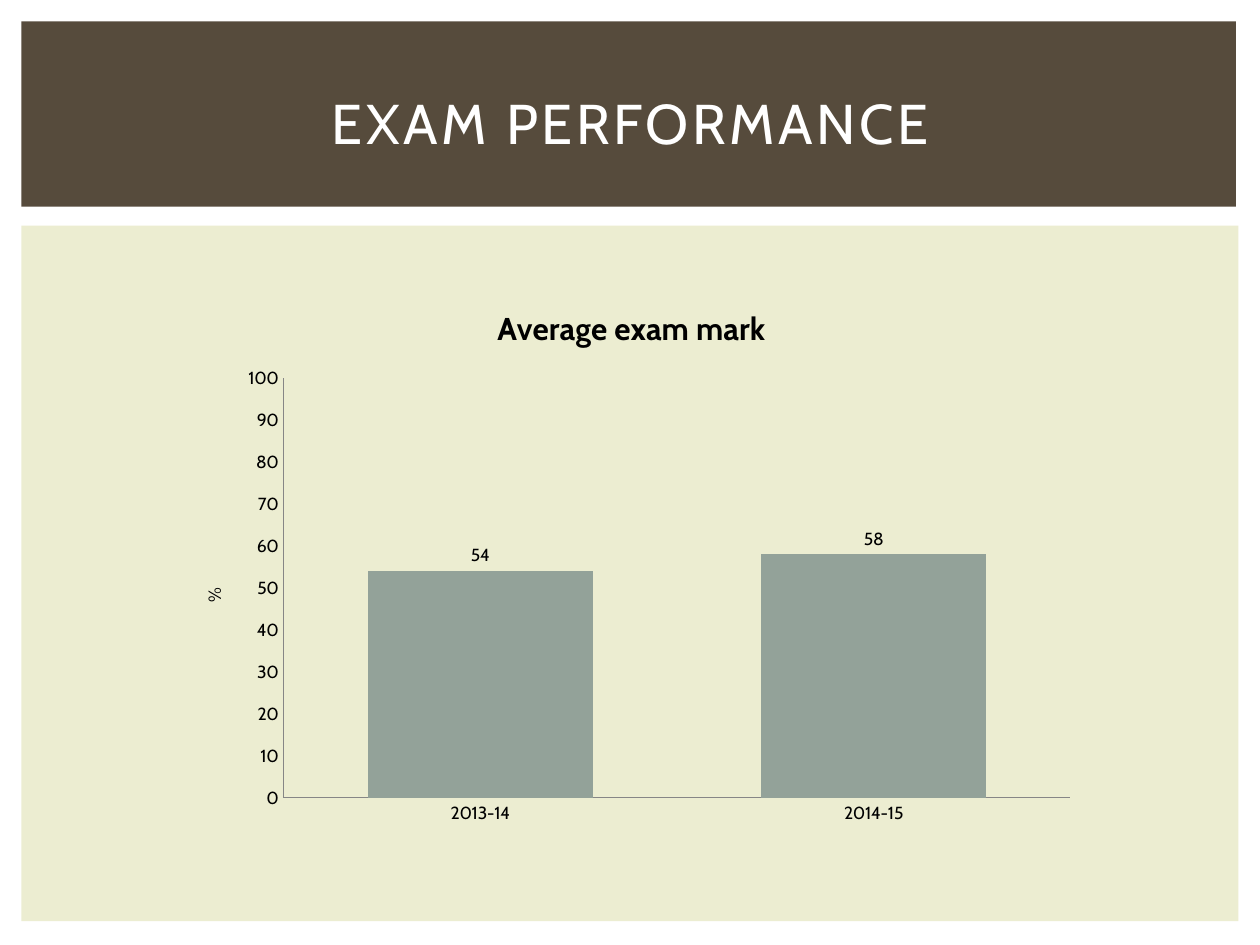
import dataclasses

import lxml.etree
import pptx
import pptx.chart.data
import pptx.dml.color
import pptx.enum.chart
import pptx.enum.shapes
import pptx.enum.text
import pptx.oxml.ns
import pptx.util


@dataclasses.dataclass(frozen=True)
class Theme:
    """Colours, font and type sizes of the slide."""
    font: str = "Cabin"
    band: str = "564B3C"
    panel: str = "ECEDD1"
    bar: str = "93A299"
    axis: str = "868686"
    text: str = "000000"
    light: str = "FFFFFF"
    title_size: int = 32
    heading_size: int = 18
    label_size: int = 10
    title_spacing: int = 200


def colour(code):
    """Turn a hex code into a colour."""
    return pptx.dml.color.RGBColor.from_string(code)


def add_element(parent, name, **attributes):
    """Append a namespaced element such as c:layout."""
    return lxml.etree.SubElement(parent, pptx.oxml.ns.qn(name), **attributes)


class SlideBuilder:
    """Places styled elements on a slide by shares of its size."""

    def __init__(self, deck, theme):
        """Start a title-only slide."""
        self.deck, self.theme = deck, theme
        self.slide = deck.slides.add_slide(deck.slide_layouts[5])

    def area(self, left, top, width, height):
        """Turn shares of the slide into lengths."""
        across, down = self.deck.slide_width, self.deck.slide_height
        return [int(share * side) for share, side in
                zip((left, top, width, height), (across, down, across, down))]

    def style(self, font, size, code, bold=False):
        """Format a font in the theme typeface."""
        font.name, font.size, font.bold = self.theme.font, pptx.util.Pt(size), bold
        font.color.rgb = colour(code)

    def panel(self, area, code):
        """Draw a plain filled rectangle behind the title."""
        box = self.slide.shapes.add_shape(
            pptx.enum.shapes.MSO_SHAPE.RECTANGLE, *self.area(*area))
        box.shadow.inherit = False
        box.fill.solid()
        box.fill.fore_color.rgb = colour(code)
        box.line.fill.background()
        self.slide.shapes.title.element.addprevious(box.element)

    def title(self, area, text):
        """Fill and format the title placeholder."""
        box = self.slide.shapes.title
        box.left, box.top, box.width, box.height = self.area(*area)
        frame = box.text_frame
        frame.text = text
        frame.vertical_anchor = pptx.enum.text.MSO_ANCHOR.MIDDLE
        para = frame.paragraphs[0]
        para.alignment = pptx.enum.text.PP_ALIGN.CENTER
        span = para.runs[0]
        self.style(span.font, self.theme.title_size, self.theme.light)
        span.font._element.set("spc", str(self.theme.title_spacing))

    def heading(self, owner, text, size, bold):
        """Write a chart or axis title."""
        frame = owner.text_frame
        frame.text = text
        self.style(frame.paragraphs[0].runs[0].font, size, self.theme.text, bold)

    def column_chart(self, area, heading, unit, categories, values, plot):
        """Add a one-series column chart with a percentage scale."""
        theme, kinds = self.theme, pptx.enum.chart
        data = pptx.chart.data.CategoryChartData()
        data.categories = categories
        data.add_series("Series 1", values)
        chart = self.slide.shapes.add_chart(
            kinds.XL_CHART_TYPE.COLUMN_CLUSTERED, *self.area(*area), data).chart
        self.style(chart.font, theme.label_size, theme.text)
        chart.has_legend = False
        self.heading(chart.chart_title, heading, theme.heading_size, True)
        chart.chart_title._element.get_or_add_overlay().set("val", "1") if hasattr(
            chart.chart_title._element, "get_or_add_overlay") else None

        for axis in (chart.category_axis, chart.value_axis):
            axis.has_major_gridlines = False
            axis.major_tick_mark = axis.minor_tick_mark = kinds.XL_TICK_MARK.NONE
            axis.format.line.color.rgb = colour(theme.axis)
            axis.format.line.width = pptx.util.Pt(0.75)
        scale = chart.value_axis
        scale.minimum_scale, scale.maximum_scale, scale.major_unit = 0, 100, 10
        self.heading(scale.axis_title, unit, theme.label_size, False)

        columns = chart.plots[0]
        columns.gap_width, columns.vary_by_categories = 75, False
        fill = columns.series[0].format.fill
        fill.solid()
        fill.fore_color.rgb = colour(theme.bar)
        labels = columns.series[0].data_labels
        labels.show_value = True
        labels.position = kinds.XL_LABEL_POSITION.OUTSIDE_END
        self.style(labels.font, theme.label_size, theme.text)
        self.place_plot(chart, plot)

    def place_plot(self, chart, plot):
        """Fix the inner plot area as shares of the chart."""
        plot_area = chart._chartSpace.chart.plotArea
        for old in plot_area.findall(pptx.oxml.ns.qn("c:layout")):
            plot_area.remove(old)
        layout = add_element(plot_area, "c:layout")
        plot_area.insert(0, layout)
        manual = add_element(layout, "c:manualLayout")
        add_element(manual, "c:layoutTarget", val="inner")
        for name in ("xMode", "yMode"):
            add_element(manual, f"c:{name}", val="edge")
        for name, share in zip("xywh", plot):
            add_element(manual, f"c:{name}", val=str(share))


def main():
    """Build the exam performance slide."""
    deck = pptx.Presentation()
    deck.slide_width, deck.slide_height = pptx.util.Inches(10), pptx.util.Inches(7.5)
    theme = Theme()
    builder = SlideBuilder(deck, theme)
    wide, high = 10, 7.5
    builder.panel((0.17 / wide, 1.79 / high, 9.66 / wide, 5.52 / high), theme.panel)
    builder.panel((0.17 / wide, 0.17 / high, 9.64 / wide, 1.47 / high), theme.band)
    builder.title((0.42 / wide, 0.39 / high, 9.17 / wide, 1.15 / high),
                  "EXAM PERFORMANCE")
    builder.column_chart((1.38 / wide, 2.25 / high, 7.26 / wide, 4.39 / high),
                         "Average exam mark", "%", ["2013-14", "2014-15"], [54, 58],
                         plot=(0.12, 0.17, 0.86, 0.76))
    deck.save("out.pptx")


if __name__ == "__main__":
    main()
